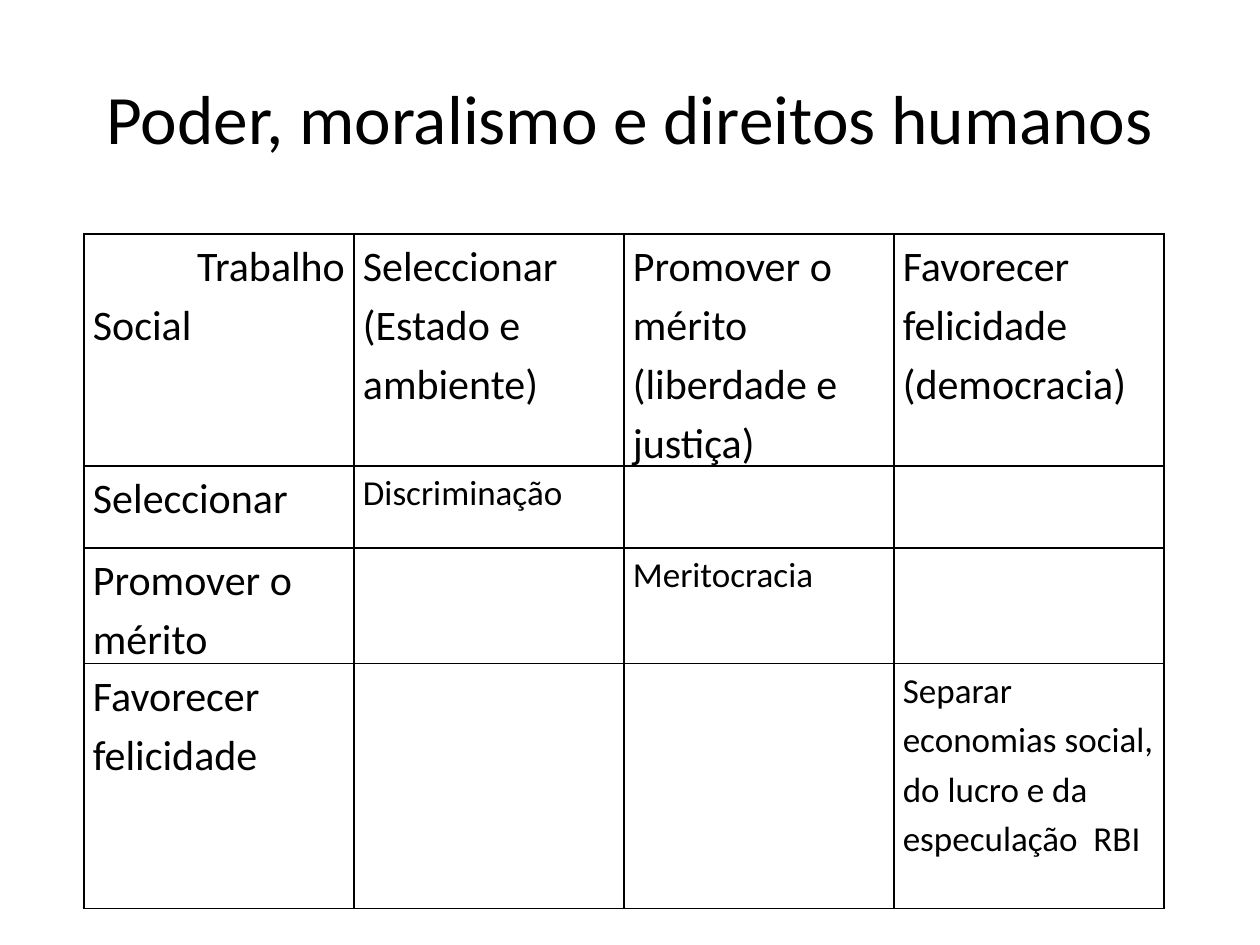
from pptx import Presentation
from pptx.dml.color import RGBColor
from pptx.enum.text import MSO_ANCHOR, PP_ALIGN
from pptx.oxml import parse_xml
from pptx.oxml.ns import nsdecls
from pptx.util import Emu, Pt

MIDDLE, TOP = MSO_ANCHOR.MIDDLE, MSO_ANCHOR.TOP
LEFT, CENTER, RIGHT = PP_ALIGN.LEFT, PP_ALIGN.CENTER, PP_ALIGN.RIGHT
BLACK, WHITE = "000000", "FFFFFF"


def px(n):
    return Emu(round(n * 914400 / 126))


def style(paragraph, size, align=LEFT):
    paragraph.alignment = align
    for run in paragraph.runs:
        run.font.name = "Calibri"
        run.font.size = Pt(size)
        run.font.color.rgb = RGBColor.from_string(BLACK)


prs = Presentation()
prs.slide_width, prs.slide_height = px(1260), px(945)
slide = prs.slides.add_slide(prs.slide_layouts[6])
slide.background.fill.solid()
slide.background.fill.fore_color.rgb = RGBColor.from_string(WHITE)

# Title
title = slide.shapes.add_textbox(px(63), px(38), px(1134), px(158)).text_frame
title.word_wrap = True
title.vertical_anchor = MIDDLE
title.text = "Poder, moralismo e direitos humanos"
style(title.paragraphs[0], 39.6, CENTER)

# Matrix of social aims against kinds of work
matrix = [
    ["Trabalho\nSocial", "Seleccionar (Estado e ambiente)",
     "Promover o mérito (liberdade e justiça)", "Favorecer felicidade (democracia)"],
    ["Seleccionar", "Discriminação", "", ""],
    ["Promover o mérito", "", "Meritocracia", ""],
    ["Favorecer felicidade", "", "",
     "Separar economias social, do lucro e da especulação  RBI"],
]
row_heights = [213, 82, 105, 245]
column_width = 270

table = slide.shapes.add_table(
    len(matrix), len(matrix[0]), px(84), px(234),
    px(column_width * len(matrix[0])), px(sum(row_heights))).table
table.first_row = table.horz_banding = False
for column in table.columns:
    column.width = px(column_width)

for r, (height, texts) in enumerate(zip(row_heights, matrix)):
    table.rows[r].height = px(height)
    for c, text in enumerate(texts):
        cell = table.cell(r, c)
        cell.margin_left = cell.margin_right = px(9)
        cell.margin_top = cell.margin_bottom = 0
        cell.vertical_anchor = TOP
        cell.text_frame.text = text
        for paragraph in cell.text_frame.paragraphs:
            paragraph.line_spacing = 1.15
            style(paragraph, 24 if r == 0 or c == 0 else 20)

        # Borders come before the fill in the cell properties
        for side in ("lnL", "lnR", "lnT", "lnB"):
            cell._tc.get_or_add_tcPr().append(parse_xml(
                f'<a:{side} {nsdecls("a")} w="{Pt(1)}"><a:solidFill>'
                f'<a:srgbClr val="{BLACK}"/></a:solidFill></a:{side}>'))
        cell.fill.background()

# The corner heading names the columns on its right, the rows on its left
table.cell(0, 0).text_frame.paragraphs[0].alignment = RIGHT

prs.save("out.pptx")
